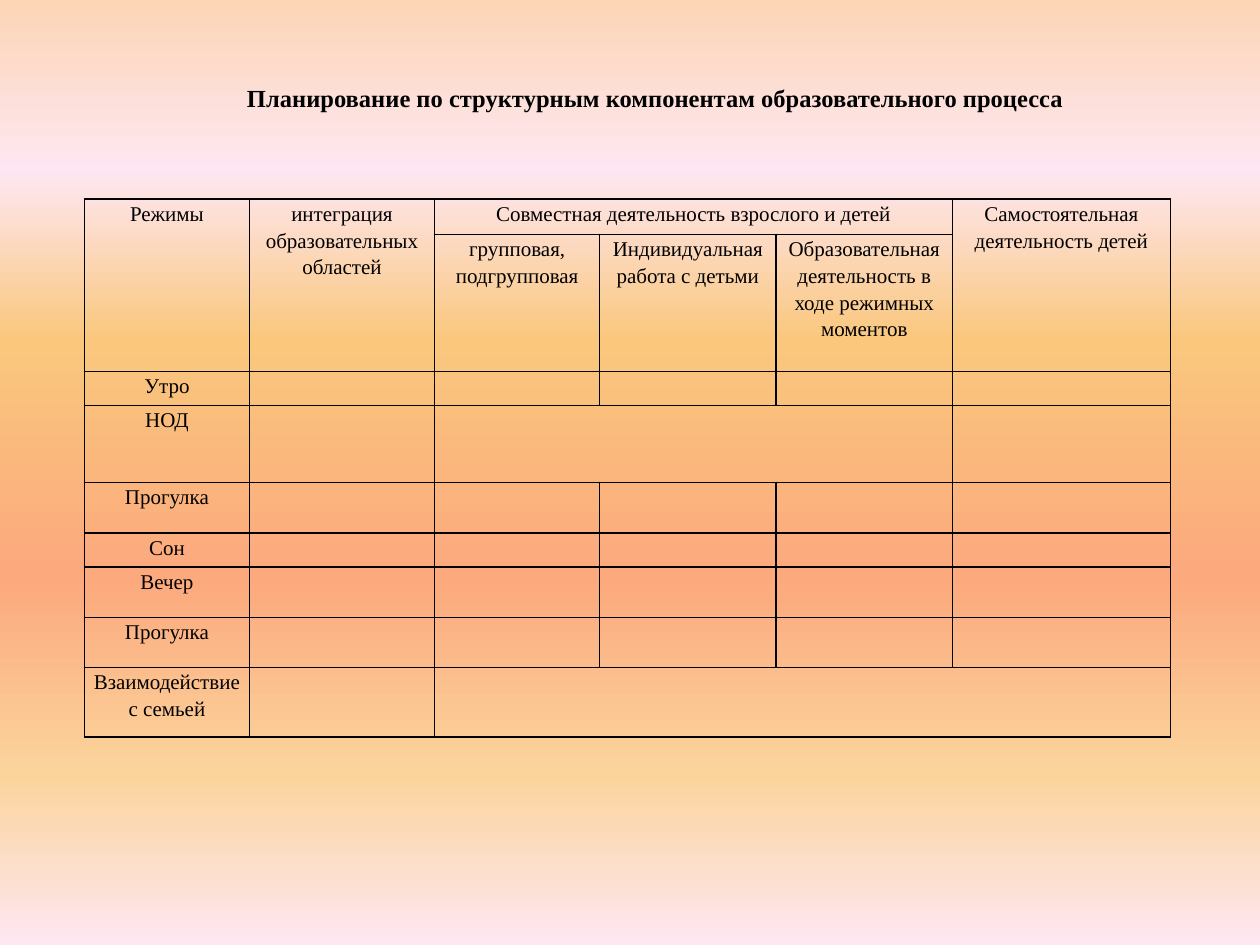
from lxml import etree
from pptx import Presentation
from pptx.dml.color import RGBColor
from pptx.enum.text import MSO_ANCHOR, MSO_AUTO_SIZE, PP_ALIGN
from pptx.oxml.ns import qn
from pptx.util import Inches, Pt

LEFT, CENTER = PP_ALIGN.LEFT, PP_ALIGN.CENTER
TOP = MSO_ANCHOR.TOP
NO_AUTOFIT = MSO_AUTO_SIZE.NONE
TITLE_ONLY = 5

BACKGROUND_STOPS = [(0, "FCD5B5"), (18, "FEE7F2"), (36, "FAC77D"),
                    (61, "FBA97D"), (82, "FBD49C"), (100, "FEE7F2")]
COLUMN_WIDTHS = [1.31, 1.47, 1.31, 1.4, 1.4, 1.73]
ROW_HEIGHTS = [0.28, 1.09, 0.27, 0.61, 0.4, 0.27, 0.4, 0.4, 0.55]
HEADINGS = {
    (0, 0): "Режимы",
    (0, 1): "интеграция образовательных областей",
    (0, 2): "Совместная деятельность взрослого и детей",
    (0, 5): "Самостоятельная деятельность детей",
    (1, 2): "групповая, подгрупповая",
    (1, 3): "Индивидуальная работа с детьми",
    (1, 4): "Образовательная деятельность в ходе режимных моментов",
}
DAY_PARTS = ["Утро", "НОД", "Прогулка", "Сон", "Вечер", "Прогулка",
             "Взаимодействие с семьей"]
# First and last (row, column) of each merged area
MERGED_AREAS = [((0, 0), (1, 0)), ((0, 1), (1, 1)), ((0, 2), (0, 4)),
                ((0, 5), (1, 5)), ((3, 2), (3, 4)), ((8, 2), (8, 5))]


def color(hex_string):
    return RGBColor.from_string(hex_string)


def write_text(text_frame, text, size=12, bold=False, align=LEFT,
               line_spacing=1.0, indent=0, font="Times New Roman",
               text_color="000000"):
    paragraph = text_frame.paragraphs[0]
    paragraph.alignment = align
    paragraph.line_spacing = line_spacing
    if indent:
        paragraph._p.get_or_add_pPr().set("indent", str(Inches(indent)))
    if not text:
        # The end mark sets the height of an empty line
        etree.SubElement(paragraph._p, qn("a:endParaRPr"), sz=str(size * 100))
        return
    run = paragraph.add_run()
    run.text = text
    run.font.name = font
    run.font.size = Pt(size)
    run.font.bold = bold
    run.font.color.rgb = color(text_color)


class SlideBuilder:
    def __init__(self, slide, line_color="000000", line_width=1):
        self.slide = slide
        self.line_color = line_color
        self.line_width = line_width

    def background(self, stops):
        """Fill the background with a gradient from top to bottom."""
        fill = self.slide.background.fill
        fill.gradient()
        fill.gradient_angle = 270
        gradient = self.slide.background._cSld.find(".//" + qn("a:gradFill"))
        stop_list = gradient.find(qn("a:gsLst"))
        for stop in list(stop_list):
            stop_list.remove(stop)
        for percent, hex_string in stops:
            stop = etree.SubElement(stop_list, qn("a:gs"), pos=str(percent * 1000))
            etree.SubElement(stop, qn("a:srgbClr"), val=hex_string)

    def title(self, text, left, top, width, height, **text_format):
        title = self.slide.shapes.title
        title.left, title.top = Inches(left), Inches(top)
        title.width, title.height = Inches(width), Inches(height)
        text_frame = title.text_frame
        text_frame.word_wrap = True
        text_frame.auto_size = NO_AUTOFIT
        text_frame.vertical_anchor = TOP
        write_text(text_frame, text, **text_format)

    def cell_borders(self, cell):
        properties = cell._tc.get_or_add_tcPr()
        for position, side in enumerate(("a:lnL", "a:lnR", "a:lnT", "a:lnB")):
            line = etree.Element(qn(side), w=str(Pt(self.line_width)))
            fill = etree.SubElement(line, qn("a:solidFill"))
            etree.SubElement(fill, qn("a:srgbClr"), val=self.line_color)
            properties.insert(position, line)

    def table(self, texts, left, top, widths, heights, merged_areas):
        """Add a table whose texts are keyed by (row, column)."""
        frame = self.slide.shapes.add_table(
            len(heights), len(widths), Inches(left), Inches(top),
            Inches(sum(widths)), Inches(sum(heights)))
        table = frame.table
        table.first_row = table.horz_banding = False
        for column, width in zip(table.columns, widths):
            column.width = Inches(width)
        for row_index, height in enumerate(heights):
            table.rows[row_index].height = Inches(height)
            for column_index in range(len(widths)):
                cell = table.cell(row_index, column_index)
                cell.margin_left = cell.margin_right = Inches(0.07)
                cell.margin_top = cell.margin_bottom = 0
                cell.fill.background()
                self.cell_borders(cell)
                write_text(cell.text_frame,
                           texts.get((row_index, column_index), ""),
                           align=CENTER, line_spacing=1.15)
        for first, last in merged_areas:
            table.cell(*first).merge(table.cell(*last))


def main():
    presentation = Presentation()
    presentation.slide_width, presentation.slide_height = Inches(10), Inches(7.5)
    layout = presentation.slide_layouts[TITLE_ONLY]
    builder = SlideBuilder(presentation.slides.add_slide(layout))
    builder.background(BACKGROUND_STOPS)
    builder.title("Планирование по структурным компонентам образовательного процесса",
                  1.37, 0.61, 7.72, 0.34, size=14, bold=True, indent=0.49)
    day_parts = {(row, 0): text for row, text in enumerate(DAY_PARTS, start=2)}
    builder.table(HEADINGS | day_parts, 0.67, 1.58, COLUMN_WIDTHS, ROW_HEIGHTS,
                  MERGED_AREAS)
    presentation.save("out.pptx")


if __name__ == "__main__":
    main()
